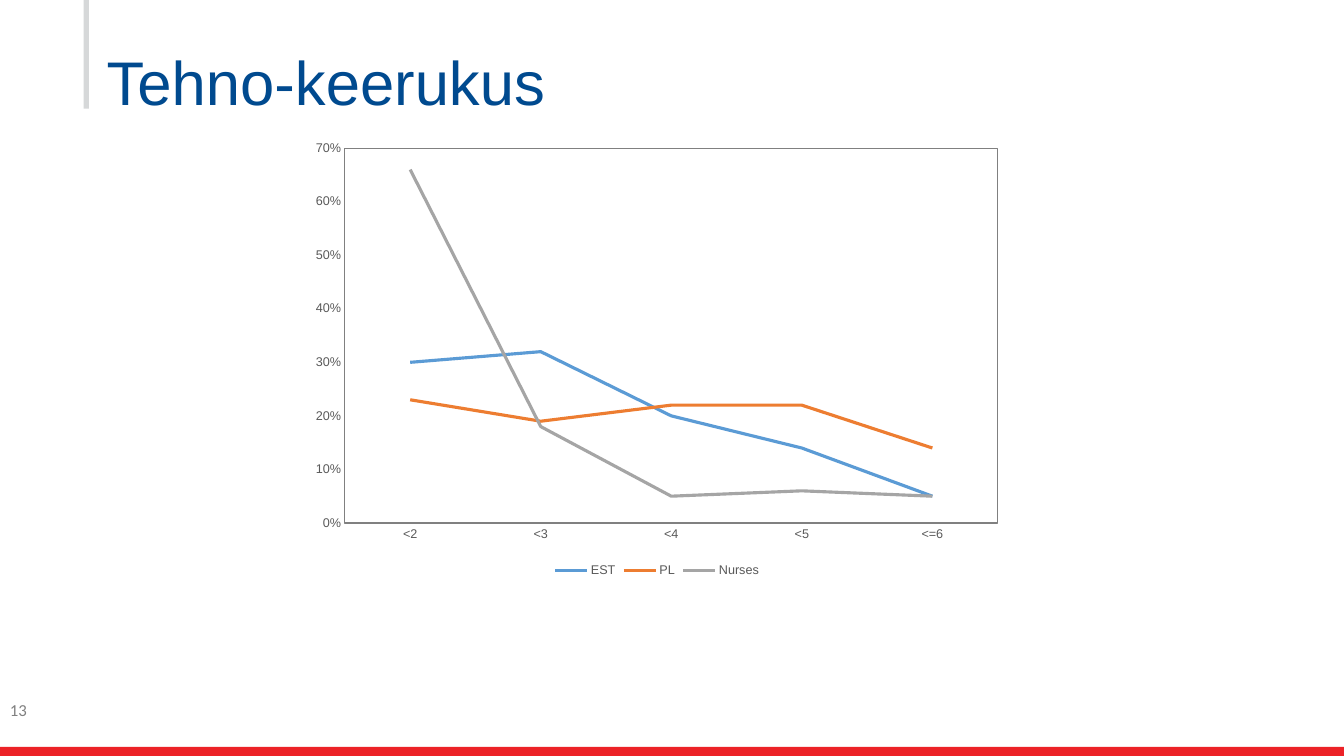
from dataclasses import dataclass

from lxml import etree
from pptx import Presentation
from pptx.chart.data import CategoryChartData
from pptx.dml.color import RGBColor
from pptx.enum.chart import XL_CHART_TYPE as ChartType
from pptx.enum.chart import XL_LEGEND_POSITION as LegendPosition
from pptx.enum.chart import XL_TICK_MARK as TickMark
from pptx.enum.shapes import MSO_SHAPE as Preset
from pptx.enum.text import MSO_ANCHOR as Anchor
from pptx.oxml import parse_xml
from pptx.oxml.ns import nsdecls, qn
from pptx.util import Cm, Pt


@dataclass(frozen=True)
class Theme:
    """Colours, fonts and type sizes of the deck."""
    title: str = "004A8F"
    red: str = "EC2227"
    rule: str = "D6D8D9"
    grey: str = "808080"
    label: str = "595959"
    series: tuple = ("5B9BD5", "ED7D31", "A5A5A5")
    font: str = "Arial"
    number_font: str = "Calibri"
    title_size: int = 44
    number_size: int = 12
    label_size: int = 9


THEME = Theme()
WIDTH, HEIGHT = 33.87, 19.05
CATEGORIES = ("<2", "<3", "<4", "<5", "<=6")
SHARES = {
    "EST": (0.30, 0.32, 0.20, 0.14, 0.05),
    "PL": (0.23, 0.19, 0.22, 0.22, 0.14),
    "Nurses": (0.66, 0.18, 0.05, 0.06, 0.05),
}


def style_font(font, name, size, colour):
    """Set face, size and colour of a font."""
    font.name, font.size = name, Pt(size)
    font.color.rgb = RGBColor.from_string(colour)


def add_bar(page, box, colour):
    """Fill the box with a plain rectangle."""
    bar = page.shapes.add_shape(Preset.RECTANGLE, *map(Cm, box))
    bar.shadow.inherit = False
    bar.fill.solid()
    bar.fill.fore_color.rgb = RGBColor.from_string(colour)
    bar.line.fill.background()


def add_text(page, box, text, name, size, colour, top_inset=0.13, spacing=1.0):
    """Place one line of text at the top of the box."""
    frame = page.shapes.add_textbox(*map(Cm, box)).text_frame
    frame.word_wrap = True
    frame.vertical_anchor = Anchor.TOP
    frame.margin_top = Cm(top_inset)
    para = frame.paragraphs[0]
    para.line_spacing = spacing
    span = para.add_run()
    span.text = text
    style_font(span.font, name, size, colour)


def frame_plot(chart):
    """Fix the plot area inside the chart and outline it."""
    plot_area = chart._chartSpace.find(".//" + qn("c:plotArea"))
    for old in plot_area.findall(qn("c:layout")):
        plot_area.remove(old)
    layout = parse_xml(f"<c:layout {nsdecls('c')}><c:manualLayout/></c:layout>")
    settings = {"layoutTarget": "inner", "xMode": "edge", "yMode": "edge",
                "x": "0.06", "y": "0.04", "w": "0.92", "h": "0.83"}
    for tag, value in settings.items():
        etree.SubElement(layout[0], qn("c:" + tag)).set("val", value)
    plot_area.insert(0, layout)
    plot_area.append(parse_xml(
        f"<c:spPr {nsdecls('c', 'a')}><a:noFill/><a:ln w='9525'><a:solidFill>"
        f"<a:srgbClr val='{THEME.grey}'/></a:solidFill></a:ln></c:spPr>"))


def add_share_chart(page, box):
    """Draw the line chart of shares by group in the box."""
    data = CategoryChartData(number_format="0%")
    data.categories = CATEGORIES
    for name, shares in SHARES.items():
        data.add_series(name, shares)
    chart = page.shapes.add_chart(ChartType.LINE, *map(Cm, box), data).chart
    style_font(chart.font, THEME.font, THEME.label_size, THEME.label)
    chart.has_title = False
    chart.has_legend = True
    chart.legend.position = LegendPosition.BOTTOM
    chart.legend.include_in_layout = False
    style_font(chart.legend.font, THEME.font, THEME.label_size, THEME.label)

    plot = chart.plots[0]
    plot.vary_by_categories = False
    for series, colour in zip(plot.series, THEME.series):
        series.smooth = False
        series.format.line.width = Pt(2.25)
        series.format.line.color.rgb = RGBColor.from_string(colour)

    shares_axis, groups_axis = chart.value_axis, chart.category_axis
    for axis in (shares_axis, groups_axis):
        axis.has_major_gridlines = False
        axis.major_tick_mark = axis.minor_tick_mark = TickMark.NONE
        style_font(axis.tick_labels.font, THEME.font, THEME.label_size, THEME.label)
    shares_axis.minimum_scale, shares_axis.maximum_scale = 0, 0.7
    shares_axis.major_unit = 0.1
    shares_axis.tick_labels.number_format = "0%"
    shares_axis.tick_labels.number_format_is_linked = False
    shares_axis.format.line.fill.background()
    groups_axis.format.line.width = Pt(0.75)
    groups_axis.format.line.color.rgb = RGBColor.from_string(THEME.grey)
    frame_plot(chart)


def add_chart_page(deck, title, number):
    """Add a page with a title, the chart and a page number."""
    page = deck.slides.add_slide(deck.slide_layouts[6])
    footer = 0.23
    add_bar(page, (0, HEIGHT - footer, WIDTH, footer), THEME.red)
    add_bar(page, (2.11, 0, 0.13, 2.74), THEME.rule)
    add_text(page, (2.44, 1.07, 29.21, 2.57), title, THEME.font,
             THEME.title_size, THEME.title, top_inset=0.25, spacing=0.9)
    add_text(page, (0, 17.5, 7.62, 1.02), number, THEME.number_font,
             THEME.number_size, THEME.grey)
    add_share_chart(page, (7.62, 3.28, 17.88, 11.38))


def main():
    """Build the deck and save it."""
    deck = Presentation()
    deck.slide_width, deck.slide_height = Cm(WIDTH), Cm(HEIGHT)
    add_chart_page(deck, "Tehno-keerukus", "13")
    deck.save("out.pptx")


if __name__ == "__main__":
    main()
